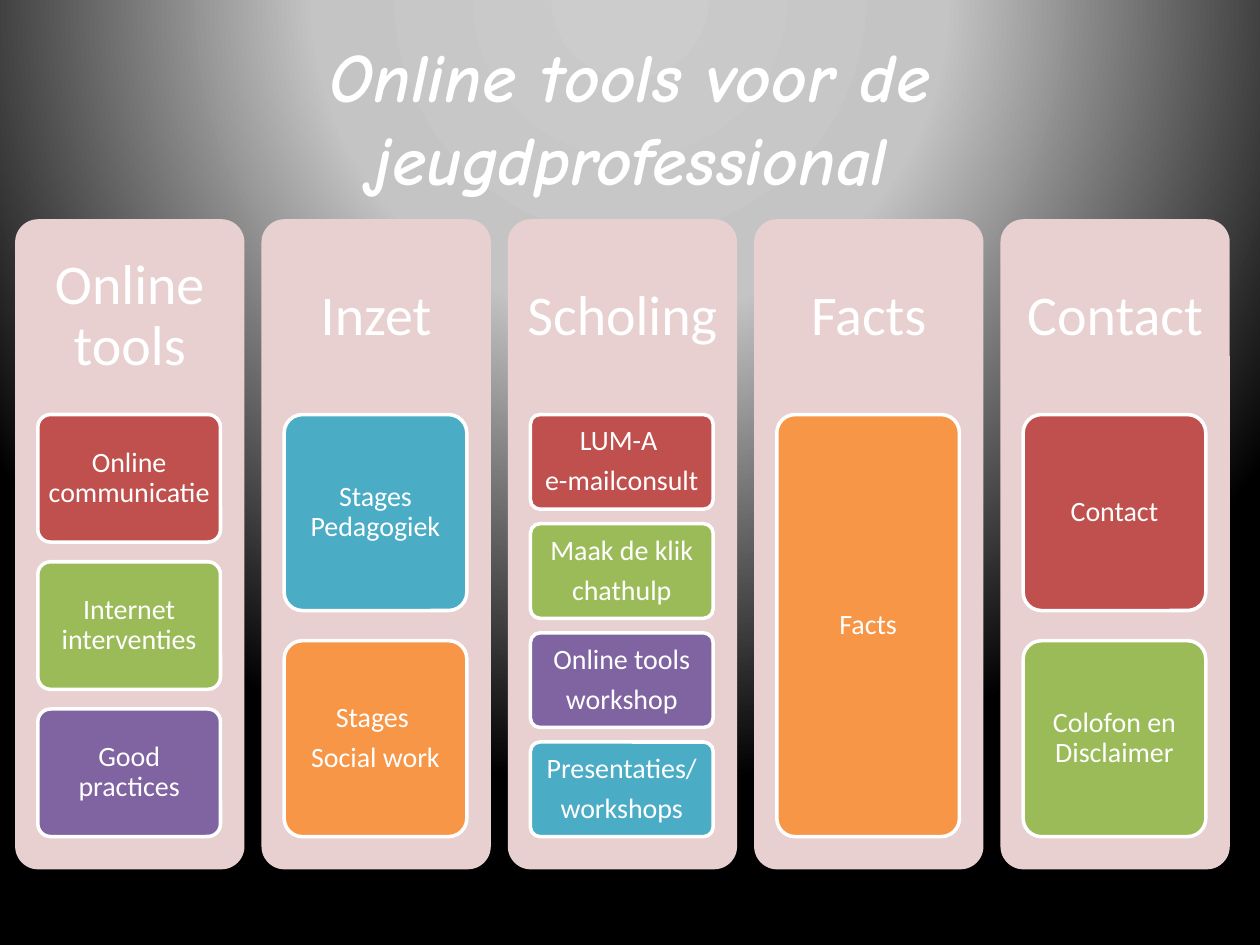
"""Build the menu slide with five columns of online tools."""
from dataclasses import dataclass

from pptx import Presentation
from pptx.dml.color import RGBColor as Rgb
from pptx.enum.shapes import MSO_SHAPE as Kind
from pptx.enum.text import MSO_ANCHOR as Anchor, MSO_AUTO_SIZE as Auto, PP_ALIGN as Align
from pptx.oxml import parse_xml
from pptx.oxml.ns import nsdecls, qn
from pptx.shapes.autoshape import Shape
from pptx.slide import Slide
from pptx.text.text import TextFrame
from pptx.util import Inches, Pt

HUES = {
    "white": "FFFFFF", "panel": "E8D0D0", "red": "C0504D", "green": "9BBB59",
    "purple": "8064A2", "blue": "4BACC6", "orange": "F79646",
}
STOPS = {0: "CCCCCC", 40: "C4C4C4", 100: "000000"}
LEFT, TOP, STEP = 0.12, 1.74, 1.955
WIDE, HIGH, HEAD = 1.82, 5.16, 1.55
INSET, CARD, STACK = 0.18, 1.45, 3.35
RATIO = 2 / 13


@dataclass
class Item:
    """A coloured card, with one string per paragraph."""
    hue: str
    lines: list[str]


@dataclass
class Column:
    """A heading and the cards under it."""
    head: str
    items: list[Item]


COLUMNS = [
    Column("Online tools", [
        Item("red", ["Online communicatie"]),
        Item("green", ["Internet interventies"]),
        Item("purple", ["Good practices"]),
    ]),
    Column("Inzet", [
        Item("blue", ["Stages Pedagogiek"]),
        Item("orange", ["Stages ", "Social work"]),
    ]),
    Column("Scholing", [
        Item("red", ["LUM-A ", "e-mailconsult"]),
        Item("green", ["Maak de klik", "chathulp"]),
        Item("purple", ["Online tools", "workshop"]),
        Item("blue", ["Presentaties/", "workshops"]),
    ]),
    Column("Facts", [Item("orange", ["Facts"])]),
    Column("Contact", [
        Item("red", ["Contact"]),
        Item("green", ["Colofon en Disclaimer"]),
    ]),
]


def tint(name: str) -> Rgb:
    """Look up a colour."""
    return Rgb.from_string(HUES[name])


def paint(slide: Slide) -> None:
    """Give the slide its radial background."""
    slide.background.fill.solid()
    old = slide.element.find(".//" + qn("a:solidFill"))
    stops = "".join(
        f'<a:gs pos="{at * 1000}"><a:srgbClr val="{hue}"/></a:gs>'
        for at, hue in STOPS.items()
    )
    grad = parse_xml(
        f'<a:gradFill {nsdecls("a")} rotWithShape="1"><a:gsLst>{stops}</a:gsLst>'
        '<a:path path="circle"><a:fillToRect l="50000" t="-80000" r="50000" b="180000"/>'
        '</a:path></a:gradFill>'
    )
    old.getparent().replace(old, grad)


def title(slide: Slide, text: str) -> None:
    """Fill and place the title."""
    box = slide.shapes.title
    box.left, box.top, box.width, box.height = map(Inches, (0.5, 0.3, 9, 1.25))
    frame = box.text_frame
    frame.text = text
    frame.auto_size = Auto.NONE
    frame.vertical_anchor = Anchor.MIDDLE
    para = frame.paragraphs[0]
    para.alignment = Align.CENTER
    font = para.font
    font.name, font.size = "Comic Neue", Pt(39.6)
    font.bold = font.italic = True
    font.color.rgb = tint("white")


def write(frame: TextFrame, lines: list[str], size: int, side: float, edge: float) -> None:
    """Write centred white paragraphs."""
    frame.text = "\n".join(lines)
    frame.word_wrap = True
    frame.vertical_anchor = Anchor.MIDDLE
    frame.margin_left = frame.margin_right = Inches(side)
    frame.margin_top = frame.margin_bottom = Inches(edge)
    for para in frame.paragraphs:
        para.alignment = Align.CENTER
        para.line_spacing = 0.9
        para.space_after = Pt(0.35 * size)
        para.font.name, para.font.size = "Calibri", Pt(size)
        para.font.color.rgb = tint("white")


def block(slide: Slide, x: float, y: float, w: float, h: float, hue: str) -> Shape:
    """Draw a rounded block without a line."""
    shape = slide.shapes.add_shape(
        Kind.ROUNDED_RECTANGLE, Inches(x), Inches(y), Inches(w), Inches(h))
    shape.adjustments[0] = 0.1
    shape.shadow.inherit = False
    shape.fill.solid()
    shape.fill.fore_color.rgb = tint(hue)
    shape.line.fill.background()
    return shape


def draw(slide: Slide, x: float, column: Column) -> None:
    """Draw a panel, its heading and its cards."""
    block(slide, x, TOP, WIDE, HIGH, "panel")
    head = slide.shapes.add_textbox(Inches(x), Inches(TOP), Inches(WIDE), Inches(HEAD))
    write(head.text_frame, [column.head], 32, 0.13, 0.13)
    count = len(column.items)
    high = STACK / (count + (count - 1) * RATIO)
    for row, item in enumerate(column.items):
        y = TOP + HEAD + row * high * (1 + RATIO)
        card = block(slide, x + INSET, y, CARD, high, item.hue)
        card.line.color.rgb = tint("white")
        card.line.width = Pt(2)
        write(card.text_frame, item.lines, 16, 0.04, 0.03)


def main() -> None:
    """Build and save the deck."""
    deck = Presentation()
    deck.slide_width, deck.slide_height = Inches(10), Inches(7.5)
    slide = deck.slides.add_slide(deck.slide_layouts[5])
    paint(slide)
    title(slide, "Online tools voor de jeugdprofessional")
    for place, column in enumerate(COLUMNS):
        draw(slide, LEFT + place * STEP, column)
    deck.save("out.pptx")


if __name__ == "__main__":
    main()
